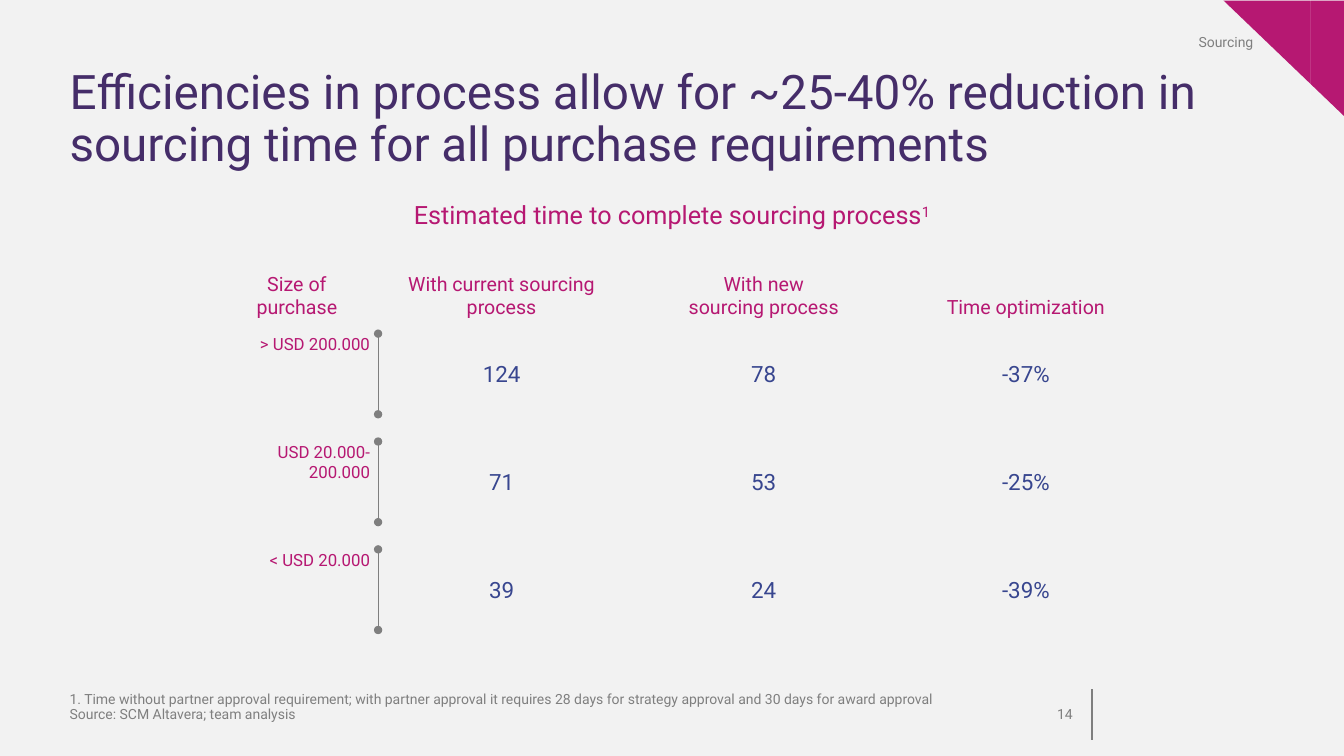
from math import cos, pi, sin

from lxml.etree import SubElement
from pptx import Presentation
from pptx.dml.color import RGBColor
from pptx.enum.shapes import MSO_CONNECTOR as Connector, MSO_SHAPE as Preset
from pptx.enum.text import MSO_ANCHOR as Anchor, PP_ALIGN as Align
from pptx.oxml.ns import qn
from pptx.util import Inches, Pt

BACKGROUND = RGBColor(0xF2, 0xF2, 0xF2)
GREY = RGBColor(0x7F, 0x7F, 0x7F)
PURPLE = RGBColor(0x45, 0x2D, 0x69)
MAGENTA = RGBColor(0xB6, 0x18, 0x72)
BLUE = RGBColor(0x38, 0x46, 0x8F)
WHITE = RGBColor(0xFF, 0xFF, 0xFF)
FONT = "Roboto"

MARGIN = 0.69
FIRST_COLUMN, COLUMN_STEP = 3.84, 2.6
HEADER_WIDTH, VALUE_WIDTH = 2.27, 1.77
FIRST_ROW, ROW_STEP = 3.31, 1.07
ROW_HEIGHT, VALUE_HEIGHT = 0.8, 0.45
LABEL_LEFT, LABEL_WIDTH, LABEL_LINE = 2.02, 1.65, 0.2
BRACKET_LEFT = 3.75
HEADER_TOP, HEADER_HEIGHT = 2.69, 0.47

HEADERS = ["With current sourcing process", "With new\nsourcing process", "Time optimization"]
ROWS = [
    ("> USD 200.000", ["124", "78", "-37%"]),
    ("USD 20.000-\n200.000", ["71", "53", "-25%"]),
    ("< USD 20.000", ["39", "24", "-39%"]),
]
FOOTNOTES = [
    "1. Time without partner approval requirement; with partner approval it requires "
    "28 days for strategy approval and 30 days for award approval",
    "Source: SCM Altavera; team analysis",
]


def add_run(paragraph, text, size, color):
    run = paragraph.add_run()
    run.text = text
    run.font.name = FONT
    run.font.size = Pt(size)
    run.font.color.rgb = color
    return run


def add_text(slide, box, paragraphs, size, color, align=Align.LEFT, anchor=Anchor.BOTTOM, spacing=1.0):
    frame = slide.shapes.add_textbox(*map(Inches, box)).text_frame
    frame.word_wrap = True
    frame.vertical_anchor = anchor
    frame.margin_left = frame.margin_right = frame.margin_top = frame.margin_bottom = 0
    for index, text in enumerate(paragraphs):
        paragraph = frame.add_paragraph() if index else frame.paragraphs[0]
        paragraph.alignment = align
        paragraph.line_spacing = spacing
        for number, line in enumerate(text.split("\n")):
            if number:
                paragraph.add_line_break()
            add_run(paragraph, line, size, color)
    return frame


def add_vertical_line(slide, left, top, height, width, dotted_ends=False):
    line = slide.shapes.add_connector(
        Connector.STRAIGHT, Inches(left), Inches(top), Inches(left), Inches(top + height))
    line.line.color.rgb = GREY
    line.line.width = Pt(width)
    properties = line._element.spPr
    if dotted_ends:
        outline = properties.find(qn("a:ln"))
        for end in ("a:headEnd", "a:tailEnd"):
            SubElement(outline, qn(end), type="oval")
    SubElement(properties, qn("a:effectLst"))


def paint(shape, color):
    shape.shadow.inherit = False
    shape.fill.solid()
    shape.fill.fore_color.rgb = color
    shape.line.fill.background()


def add_corner(slide):
    triangle = slide.shapes.add_shape(
        Preset.ISOSCELES_TRIANGLE, Inches(12.16), Inches(-0.02), Inches(1.15), Inches(1.2))
    triangle.adjustments[0] = 1
    triangle.rotation = 270
    paint(triangle, MAGENTA)


def clipboard_outlines():
    left_edge = [(12.84, 0.18), (12.92, 0.18), (12.92, 0.19), (12.85, 0.19),
                 (12.85, 0.52), (13.02, 0.52), (13.03, 0.53), (12.84, 0.53)]
    right_edge = [(13.02, 0.18), (13.1, 0.18), (13.1, 0.43),
                  (13.09, 0.42), (13.09, 0.19), (13.02, 0.19)]
    clip = [(12.93, 0.16), (12.95, 0.16), (12.96, 0.15), (12.98, 0.15),
            (12.99, 0.16), (13.01, 0.16), (13.01, 0.2), (12.93, 0.2)]
    tick = [(13.11, 0.46), (13.12, 0.47), (13.07, 0.52), (13.06, 0.52),
            (13.03, 0.5), (13.04, 0.49), (13.06, 0.51)]
    badge = [(13.08 + 0.06 * cos(step * pi / 12), 0.49 - 0.06 * sin(step * pi / 12))
             for step in range(24)]
    outlines = [left_edge, right_edge, clip, badge, tick]
    for index, end in enumerate([13.06] * 5 + [13.05, 13.02]):
        top = 0.25 + 0.035 * index
        outlines.append([(12.88, top), (end, top), (end, top + 0.01), (12.88, top + 0.01)])
    return outlines


def add_clipboard(slide):
    outlines = clipboard_outlines()
    builder = slide.shapes.build_freeform(*outlines[0][0], scale=Inches(1))
    for index, outline in enumerate(outlines):
        if index:
            builder.move_to(*outline[0])
        builder.add_line_segments(outline[1:], close=True)
    paint(builder.convert_to_shape(), WHITE)


def add_headers(slide):
    boxes = [(2.12, LABEL_WIDTH)]
    boxes += [(FIRST_COLUMN + column * COLUMN_STEP, HEADER_WIDTH) for column in range(len(HEADERS))]
    for (left, width), text in zip(boxes, ["Size of\npurchase"] + HEADERS):
        add_text(slide, (left, HEADER_TOP, width, HEADER_HEIGHT), [text], 14, MAGENTA, Align.CENTER)


def add_row(slide, row, label, values):
    top = FIRST_ROW + row * ROW_STEP
    label_height = LABEL_LINE * len(label.split("\n"))
    add_text(slide, (LABEL_LEFT, top, LABEL_WIDTH, label_height), [label], 12, MAGENTA, Align.RIGHT)
    add_vertical_line(slide, BRACKET_LEFT, top, ROW_HEIGHT, 0.75, dotted_ends=True)
    value_top = top + (ROW_HEIGHT - VALUE_HEIGHT) / 2
    for column, value in enumerate(values):
        left = FIRST_COLUMN + column * COLUMN_STEP + (HEADER_WIDTH - VALUE_WIDTH) / 2
        add_text(slide, (left, value_top, VALUE_WIDTH, VALUE_HEIGHT), [value], 16, BLUE,
                 Align.CENTER, Anchor.MIDDLE)


def main():
    presentation = Presentation()
    presentation.slide_width = Inches(13.33)
    presentation.slide_height = Inches(7.5)
    slide = presentation.slides.add_slide(presentation.slide_layouts[6])
    slide.background.fill.solid()
    slide.background.fill.fore_color.rgb = BACKGROUND

    add_text(slide, (MARGIN, 0.68, 11.96, 1.03),
             ["Efficiencies in process allow for ~25-40% reduction in sourcing time "
              "for all purchase requirements"], 34, PURPLE, anchor=Anchor.TOP, spacing=0.9)
    subtitle = add_text(slide, (3.41, 1.98, 6.51, 0.3),
                        ["Estimated time to complete sourcing process"], 18, MAGENTA, Align.CENTER)
    note_mark = add_run(subtitle.paragraphs[0], "1", 18, MAGENTA)
    note_mark.font._element.set("baseline", "30000")

    add_headers(slide)
    for row, (label, values) in enumerate(ROWS):
        add_row(slide, row, label, values)

    add_text(slide, (MARGIN, 6.87, 9.88, 0.3), FOOTNOTES, 10, GREY, spacing=0.9)
    add_text(slide, (10.22, 7, 0.42, 0.17), ["14"], 10, GREY, Align.RIGHT)
    add_vertical_line(slide, 10.83, 6.84, 0.5, 1.5)

    add_corner(slide)
    add_text(slide, (10.99, 0.28, 1.44, 0.28), ["Sourcing"], 10, GREY, Align.RIGHT, Anchor.MIDDLE)
    add_clipboard(slide)
    presentation.save("out.pptx")


if __name__ == "__main__":
    main()
